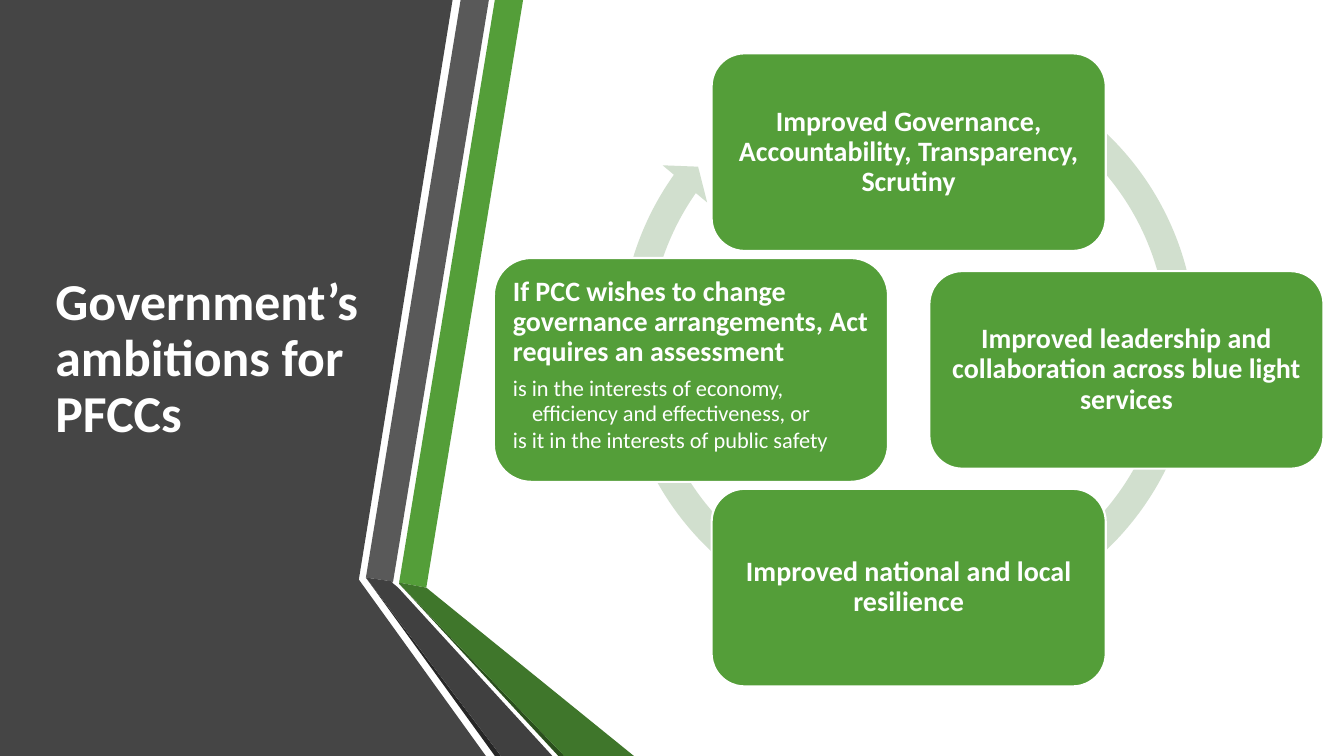
from pptx import Presentation
from pptx.dml.color import RGBColor
from pptx.enum.shapes import MSO_SHAPE
from pptx.enum.text import MSO_ANCHOR, MSO_AUTO_SIZE, PP_ALIGN
from pptx.util import Pt

PX = 9144  # EMU per px, 100 px to the inch
FONT = "Calibri"
COLORS = {
    "panel": "454545", "green": "549E39", "leaf": "3F762B", "moss": "2A4F1C",
    "grey": "595959", "coal": "404040", "ink": "262626",
    "ring": "D1DFCE", "white": "FFFFFF",
}

# Outlines of the panel and its folded bands, from back to front
BANDS = [
    ("panel", [(0, 0), (449, 0), (356, 575), (482, 750), (0, 750)]),
    ("green", [(396, 578), (423, 583), (519, 0), (491, 0)]),
    ("grey", [(485, 0), (457, 0), (363, 573), (390, 577)]),
    ("ink", [(363, 573), (491, 750), (497, 750)]),
    ("moss", [(396, 579), (554, 750), (560, 750)]),
    ("leaf", [(396, 579), (560, 750), (629, 750), (423, 583), (396, 578)]),
    ("coal", [(548, 750), (395, 583), (389, 578), (390, 577), (363, 573),
              (497, 750)]),
]

# Cards of the cycle: step right, step down, height, heading, points
CARDS = [
    (0, -1, 196, "Improved Governance, Accountability, Transparency, Scrutiny", []),
    (1, 0, 196, "Improved leadership and collaboration across blue light services", []),
    (0, 1, 196, "Improved national and local resilience", []),
    (-1, 0, 222,
     "If PCC wishes to change governance arrangements, Act requires an assessment",
     ["is in the interests of economy, efficiency and effectiveness, or",
      "is it in the interests of public safety"]),
]


def color(name):
    return RGBColor.from_string(COLORS[name])


def paint(shape, fill, edge=None):
    shape.shadow.inherit = False
    shape.fill.solid()
    shape.fill.fore_color.rgb = color(fill)
    if edge:
        shape.line.color.rgb = color(edge)
        shape.line.width = Pt(1.5)
    else:
        shape.line.fill.background()


def place(shape, box):
    shape.left, shape.top, shape.width, shape.height = [n * PX for n in box]


def style(para, size, bold, align=PP_ALIGN.LEFT):
    para.alignment = align
    para.line_spacing = 0.9
    para.space_before = Pt(0)
    for run in para.runs:
        font = run.font
        font.name, font.size, font.bold = FONT, Pt(size), bold
        font.color.rgb = color("white")


def draw_panel(slide, box):
    left, top = box[:2]
    for fill, dots in BANDS:
        dots = [(left + x, top + y) for x, y in dots]
        pen = slide.shapes.build_freeform(*dots[0], scale=PX)
        pen.add_line_segments(dots[1:], close=True)
        paint(pen.convert_to_shape(), fill)

    # Title, brought in front of the panel
    title = slide.shapes.title
    slide.shapes._spTree.append(title._element)
    place(title, (left + 45, top + 78, 326, 558))
    frame = title.text_frame
    frame.text = "Government’s ambitions for PFCCs"
    frame.word_wrap = True
    frame.auto_size = MSO_AUTO_SIZE.NONE
    frame.vertical_anchor = MSO_ANCHOR.MIDDLE
    style(frame.paragraphs[0], 37, True)


def draw_card(slide, box, head, points):
    card = slide.shapes.add_shape(
        MSO_SHAPE.ROUNDED_RECTANGLE, *[n * PX for n in box])
    paint(card, "green", "white")
    frame = card.text_frame
    frame.word_wrap = True
    frame.margin_left = frame.margin_right = 8 * PX
    frame.margin_top = frame.margin_bottom = 8 * PX
    frame.vertical_anchor = MSO_ANCHOR.TOP if points else MSO_ANCHOR.MIDDLE
    frame.text = head
    para = frame.paragraphs[0]
    style(para, 20, True, PP_ALIGN.LEFT if points else PP_ALIGN.CENTER)
    if points:
        para.space_after = Pt(7)

    # Points with a hanging indent
    for point in points:
        para = frame.add_paragraph()
        para.text = point
        para.level = 1
        style(para, 16, False)
        para.space_after = Pt(2.4)
        props = para._p.get_or_add_pPr()
        props.set("marL", str(19 * PX))
        props.set("indent", str(-19 * PX))


def draw_cycle(slide, box):
    left, top, width, _ = box
    mid_x, mid_y = left + width // 2, top + 328
    reach, wide, ring = 216, 391, 600

    # Ring arrow behind the cards
    arrow = slide.shapes.add_shape(
        MSO_SHAPE.CIRCULAR_ARROW, (mid_x - ring // 2) * PX, top * PX,
        ring * PX, ring * PX)
    for i, value in enumerate([0.047, 2.729, 129.152, 179.739, 0.048]):
        arrow.adjustments[i] = value
    paint(arrow, "ring")

    for right, down, high, head, points in CARDS:
        x = mid_x + right * reach - wide // 2
        y = mid_y + down * reach - high // 2
        draw_card(slide, (x, y, wide, high), head, points)


def main():
    deck = Presentation()
    deck.slide_width, deck.slide_height = 12192000, 750 * PX
    slide = deck.slides.add_slide(deck.slide_layouts[5])
    draw_panel(slide, (0, 0, 629, 750))
    draw_cycle(slide, (490, 39, 822, 641))
    deck.save("out.pptx")


if __name__ == "__main__":
    main()
